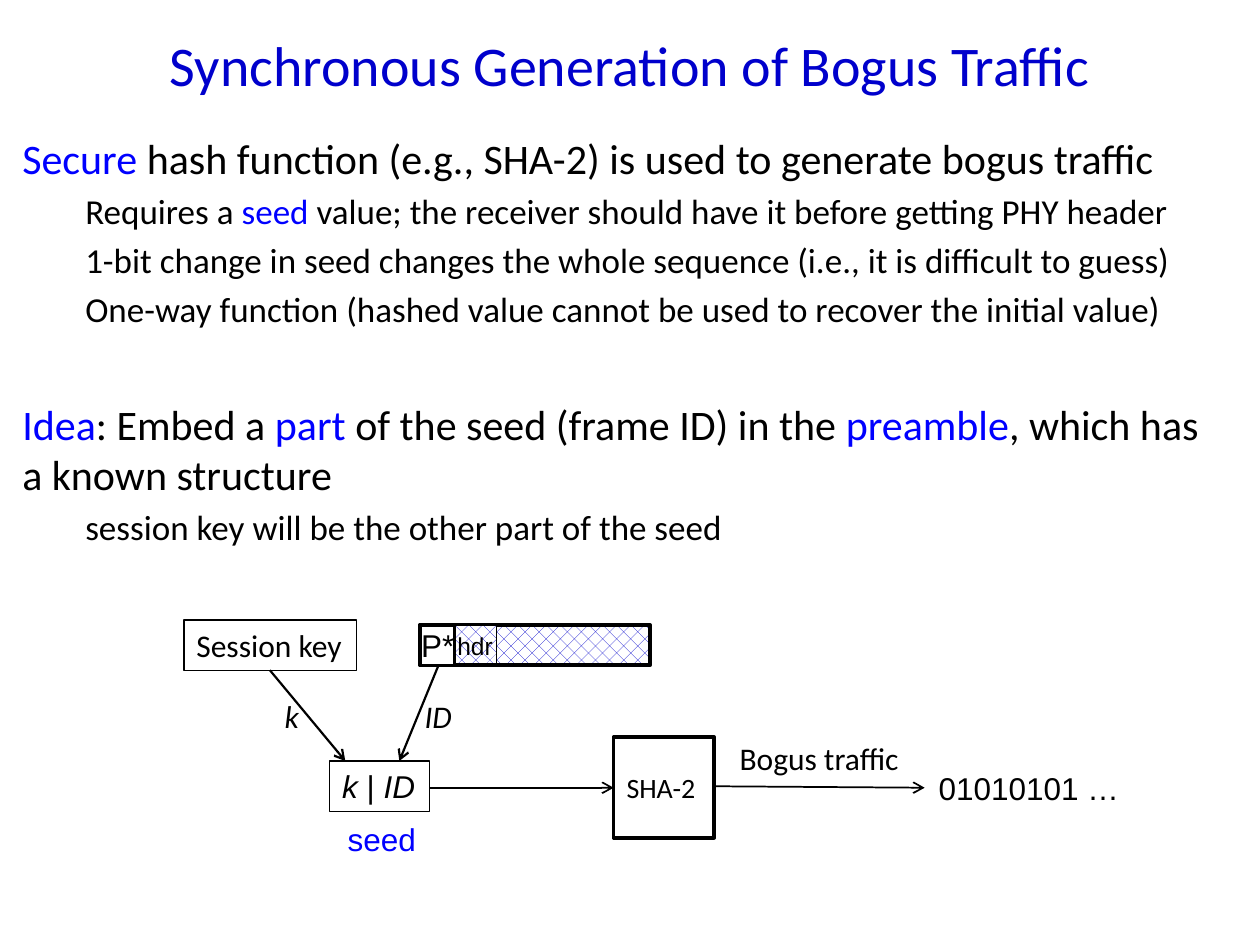
from lxml import etree
from pptx import Presentation
from pptx.dml.color import RGBColor
from pptx.enum.dml import MSO_PATTERN
from pptx.enum.shapes import MSO_CONNECTOR, MSO_SHAPE
from pptx.enum.text import MSO_ANCHOR, MSO_AUTO_SIZE, PP_ALIGN
from pptx.oxml.ns import qn
from pptx.util import Cm, Pt

RECTANGLE = MSO_SHAPE.RECTANGLE
STRAIGHT = MSO_CONNECTOR.STRAIGHT
HATCH = MSO_PATTERN.PERCENT_25
TOP, MIDDLE = MSO_ANCHOR.TOP, MSO_ANCHOR.MIDDLE
LEFT, CENTER = PP_ALIGN.LEFT, PP_ALIGN.CENTER
GROW, FIXED = MSO_AUTO_SIZE.SHAPE_TO_FIT_TEXT, MSO_AUTO_SIZE.NONE

BLACK = RGBColor(0x00, 0x00, 0x00)
WHITE = RGBColor(0xFF, 0xFF, 0xFF)
BLUE = RGBColor(0x00, 0x00, 0xFF)
NAVY = RGBColor(0x00, 0x00, 0xCC)
INSETS = (0.25, 0.13, 0.25, 0.13)


def add_run(paragraph, text, size=18, font="Calibri", color=BLACK, italic=False):
    run = paragraph.add_run()
    run.text = text
    run.font.size = Pt(size)
    run.font.name = font
    run.font.color.rgb = color
    run.font.italic = italic


class SlideBuilder:
    def __init__(self, slide):
        self.slide = slide

    def frame(self, shape, insets=INSETS, anchor=TOP, wrap=False, grow=False):
        frame = shape.text_frame
        frame.word_wrap = wrap
        frame.auto_size = GROW if grow else FIXED
        frame.vertical_anchor = anchor
        (frame.margin_left, frame.margin_top,
         frame.margin_right, frame.margin_bottom) = map(Cm, insets)
        return frame

    def add_runs(self, paragraph, runs, align=LEFT, **style):
        paragraph.alignment = align
        for text, changes in runs:
            add_run(paragraph, text, **{**style, **changes})

    def text(self, box, runs, align=LEFT, wrap=False, grow=True, insets=INSETS, **style):
        shape = self.slide.shapes.add_textbox(*map(Cm, box))
        frame = self.frame(shape, insets, wrap=wrap, grow=grow)
        self.add_runs(frame.paragraphs[0], runs, align, **style)

    def body(self, box, items):
        shape = self.slide.shapes.add_textbox(*map(Cm, box))
        frame = self.frame(shape, wrap=True)
        for index, (level, space, runs) in enumerate(items):
            paragraph = frame.add_paragraph() if index else frame.paragraphs[0]
            paragraph.level = level
            paragraph.space_before = Pt(space)
            paragraph._p.get_or_add_pPr().set("marL", str(Cm(1.27 * level)))
            self.add_runs(paragraph, runs, size=20 if level else 24)

    def box(self, box, width, fill=None, runs=(), align=LEFT, insets=INSETS,
            anchor=TOP, wrap=False, grow=False, **style):
        shape = self.slide.shapes.add_shape(RECTANGLE, *map(Cm, box))
        shape.shadow.inherit = False
        shape.line.color.rgb = BLACK
        shape.line.width = Pt(width)
        if fill == HATCH:
            shape.fill.patterned()
            shape.fill.pattern = HATCH
            shape.fill.fore_color.rgb = NAVY
            shape.fill.back_color.rgb = WHITE
        elif fill is None:
            shape.fill.background()
        else:
            shape.fill.solid()
            shape.fill.fore_color.rgb = fill
        frame = self.frame(shape, insets, anchor, wrap, grow)
        self.add_runs(frame.paragraphs[0], runs, align, **style)

    def arrow(self, start, end, width=1):
        connector = self.slide.shapes.add_connector(STRAIGHT, *map(Cm, start + end))
        connector.line.color.rgb = BLACK
        connector.line.width = Pt(width)
        properties = connector.element.spPr
        etree.SubElement(properties.find(qn("a:ln")), qn("a:tailEnd"), type="arrow")
        etree.SubElement(properties, qn("a:effectLst"))


def main():
    presentation = Presentation()
    presentation.slide_width = Cm(25.4)
    presentation.slide_height = Cm(19.05)
    builder = SlideBuilder(presentation.slides.add_slide(presentation.slide_layouts[6]))
    blue, italic = {"color": BLUE}, {"italic": True}

    builder.text((0, 0.43, 25.4, 2.11), [("Synchronous Generation of Bogus Traffic", {})],
                 align=CENTER, wrap=True, grow=False, insets=(0.25, 0.18, 0.25, 0.13),
                 size=32, color=NAVY)
    builder.body((0.2, 2.54, 24.77, 14.17), [
        (0, 0, [("Secure", blue),
                (" hash function (e.g., SHA-2) is used to generate bogus traffic", {})]),
        (1, 4, [("Requires a ", {}), ("seed", blue),
                (" value; the receiver should have it before getting PHY header", {})]),
        (1, 4, [("1-bit change in seed changes the whole sequence "
                 "(i.e., it is difficult to guess)", {})]),
        (1, 4, [("One-way function (hashed value cannot be used "
                 "to recover the initial value)", {})]),
        (0, 39, [("Idea", blue), (": Embed a ", {}), ("part", blue),
                 (" of the seed (frame ID) in the ", {}), ("preamble", blue),
                 (", which has a known structure", {})]),
        (1, 4, [("session key will be the other part of the seed", {})]),
    ])

    builder.box((8.46, 12.6, 4.65, 0.81), 2, HATCH)
    builder.box((8.48, 12.6, 0.69, 0.81), 1.75, WHITE, [("P*", {})], align=CENTER,
                insets=(0.25, 0.03, 0.25, 0.13), font="Arial")
    builder.box((9.17, 12.6, 0.84, 0.79), 1, HATCH, [("hdr", {})],
                insets=(0.05, 0.13, 0.05, 0.13), size=14, font="Arial")
    builder.box((3.71, 12.5, 3.48, 1.02), 0.75, runs=[("Session key", {})], grow=True)
    builder.box((6.65, 15.34, 2.01, 1.02), 0.75, grow=True, font="Arial",
                runs=[("k", italic), (" | ", {}), ("ID", italic)])
    builder.box((12.37, 14.86, 2.03, 2.03), 2, runs=[("SHA-2", {})], align=CENTER,
                insets=(0.13, 0.13, 0.25, 0.13), anchor=MIDDLE, wrap=True, size=16)

    builder.arrow((8.66, 15.88), (12.37, 15.88))
    builder.arrow((14.4, 15.85), (18.64, 15.88))
    builder.arrow((5.44, 13.51), (6.96, 15.34), 1.25)
    builder.arrow((8.84, 13.41), (8.05, 15.34), 1.25)

    for left, top, width, label, style in [
        (18.67, 15.37, 4.19, "01010101 …", {"font": "Arial"}),
        (14.66, 14.76, 3.76, "Bogus traffic", {}),
        (5.49, 13.92, 0.81, "k", italic),
        (8.31, 13.92, 1.07, "ID", italic),
        (6.76, 16.41, 1.9, "seed", {"font": "Arial", "color": BLUE}),
    ]:
        builder.text((left, top, width, 1.02), [(label, style)])

    presentation.save("out.pptx")


if __name__ == "__main__":
    main()
